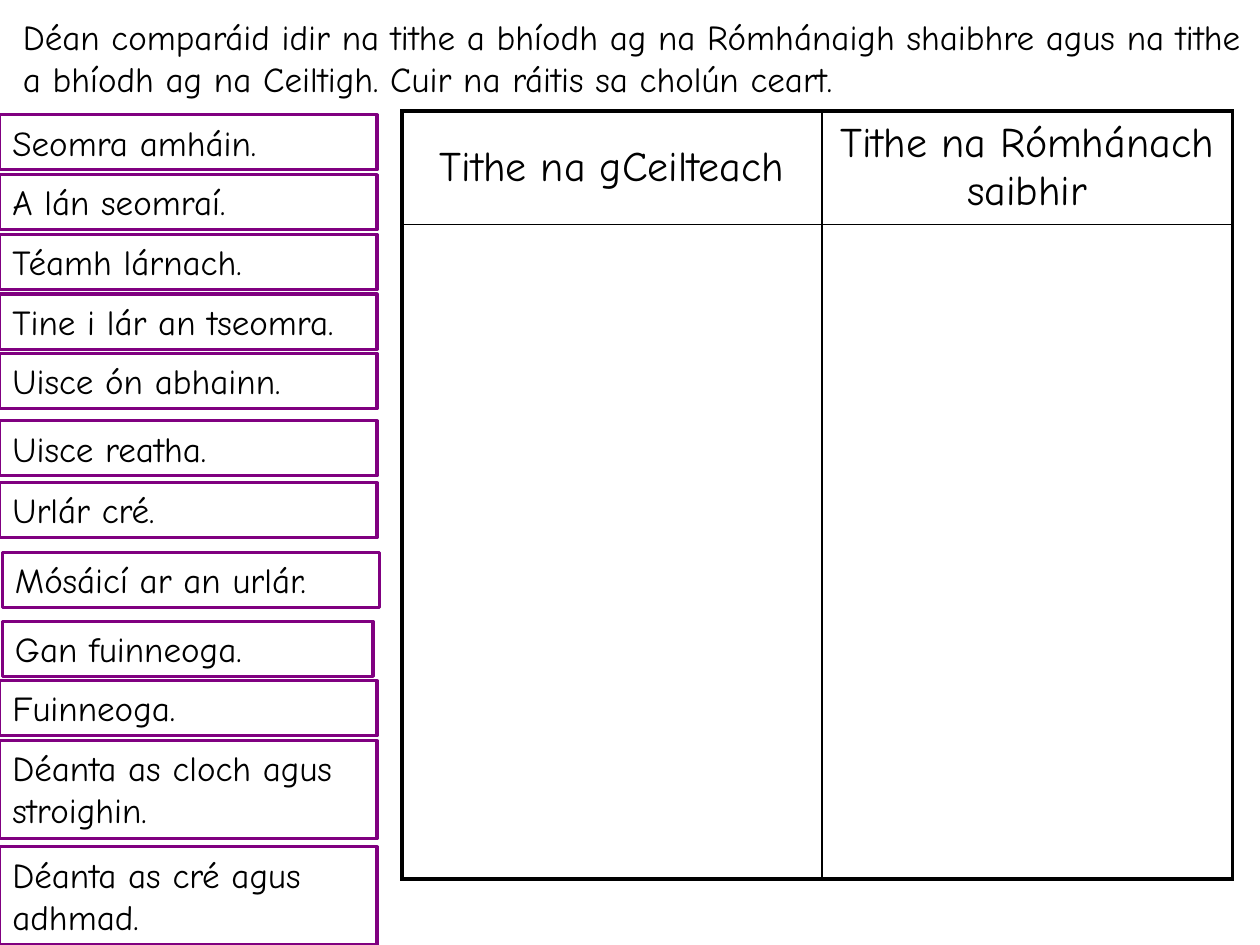
from lxml import etree
from pptx import Presentation
from pptx.dml import color
from pptx.enum import shapes, text
from pptx.oxml import ns
from pptx.util import Pt

THEME = {
    "font": "Comic Neue",
    "ink": color.RGBColor(0, 0, 0),
    "frame": color.RGBColor(0x80, 0, 0x80),
    "body": Pt(20),
    "heading": Pt(24),
    "outer": Pt(2.25),
    "inner": Pt(1),
    "outline": Pt(1.75),
}


def write(frame, words, size=THEME["body"], align=text.PP_ALIGN.LEFT):
    frame.word_wrap = True
    paragraph = frame.paragraphs[0]
    paragraph.alignment = align
    run = paragraph.add_run()
    run.text = words
    run.font.name = THEME["font"]
    run.font.size = size
    run.font.color.rgb = THEME["ink"]


def draw_border(cell, side, width):
    edge = etree.SubElement(cell._tc.get_or_add_tcPr(), ns.qn(f"a:{side}"), w=str(width))
    fill = etree.SubElement(edge, ns.qn("a:solidFill"))
    etree.SubElement(fill, ns.qn("a:srgbClr"), val=str(THEME["ink"]))


deck = Presentation()
deck.slide_width, deck.slide_height = Pt(720), Pt(540)
slide = deck.slides.add_slide(deck.slide_layouts[5])

task = slide.shapes.title
task.left, task.top, task.width, task.height = Pt(5.8), Pt(5), Pt(717), Pt(55.5)
task.text_frame.vertical_anchor = text.MSO_ANCHOR.TOP
write(
    task.text_frame,
    "Déan comparáid idir na tithe a bhíodh ag na Rómhánaigh shaibhre agus na tithe "
    "a bhíodh ag na Ceiltigh. Cuir na ráitis sa cholún ceart.",
)
task.text_frame.auto_size = text.MSO_AUTO_SIZE.SHAPE_TO_FIT_TEXT

headings = ["Tithe na gCeilteach", "Tithe na Rómhánach saibhir"]
column_widths = [240, 234.5]
row_heights = [64.8, 374]
houses = slide.shapes.add_table(
    2, 2, Pt(229.7), Pt(63.5), Pt(sum(column_widths)), Pt(sum(row_heights))
).table
houses.first_row = houses.horz_banding = False
for column, width in zip(houses.columns, column_widths):
    column.width = Pt(width)
for row, height in zip(houses.rows, row_heights):
    row.height = Pt(height)
for r in range(2):
    for c in range(2):
        cell = houses.cell(r, c)
        outer_sides = {"lnR" if c else "lnL", "lnB" if r else "lnT"}
        for side in ("lnL", "lnR", "lnT", "lnB"):
            draw_border(cell, side, THEME["outer"] if side in outer_sides else THEME["inner"])
        cell.fill.background()
for c, heading in enumerate(headings):
    cell = houses.cell(0, c)
    cell.vertical_anchor = text.MSO_ANCHOR.MIDDLE
    write(cell.text_frame, heading, size=THEME["heading"], align=text.PP_ALIGN.CENTER)

statements = [
    ("Seomra amháin.", 0, 65.6, 215.5, 31.5),
    ("A lán seomraí.", 0, 99.8, 215.5, 31.5),
    ("Téamh lárnach.", 0, 134, 215.5, 31.5),
    ("Tine i lár an tseomra.", 0, 168, 215.5, 31.5),
    ("Uisce ón abhainn.", 0, 202, 215.5, 31.5),
    ("Uisce reatha.", 0, 240.5, 215.5, 31.5),
    ("Urlár cré.", 0, 275.8, 215.5, 31.5),
    ("Mósáicí ar an urlár.", 1.5, 315.5, 215.5, 31.5),
    ("Gan fuinneoga.", 1.5, 355, 211.7, 31.5),
    ("Fuinneoga.", 0, 389, 215.5, 31.5),
    ("Déanta as cloch agus stroighin.", 0, 423.3, 215.5, 56),
    ("Déanta as cré agus adhmad.", 0, 484, 215.5, 56),
]
for words, *box in statements:
    statement = slide.shapes.add_shape(shapes.MSO_SHAPE.RECTANGLE, *map(Pt, box))
    statement.shadow.inherit = False
    statement.fill.background()
    statement.line.color.rgb = THEME["frame"]
    statement.line.width = THEME["outline"]
    statement.text_frame.vertical_anchor = text.MSO_ANCHOR.TOP
    write(statement.text_frame, words)
    statement.text_frame.auto_size = text.MSO_AUTO_SIZE.SHAPE_TO_FIT_TEXT

deck.save("out.pptx")
